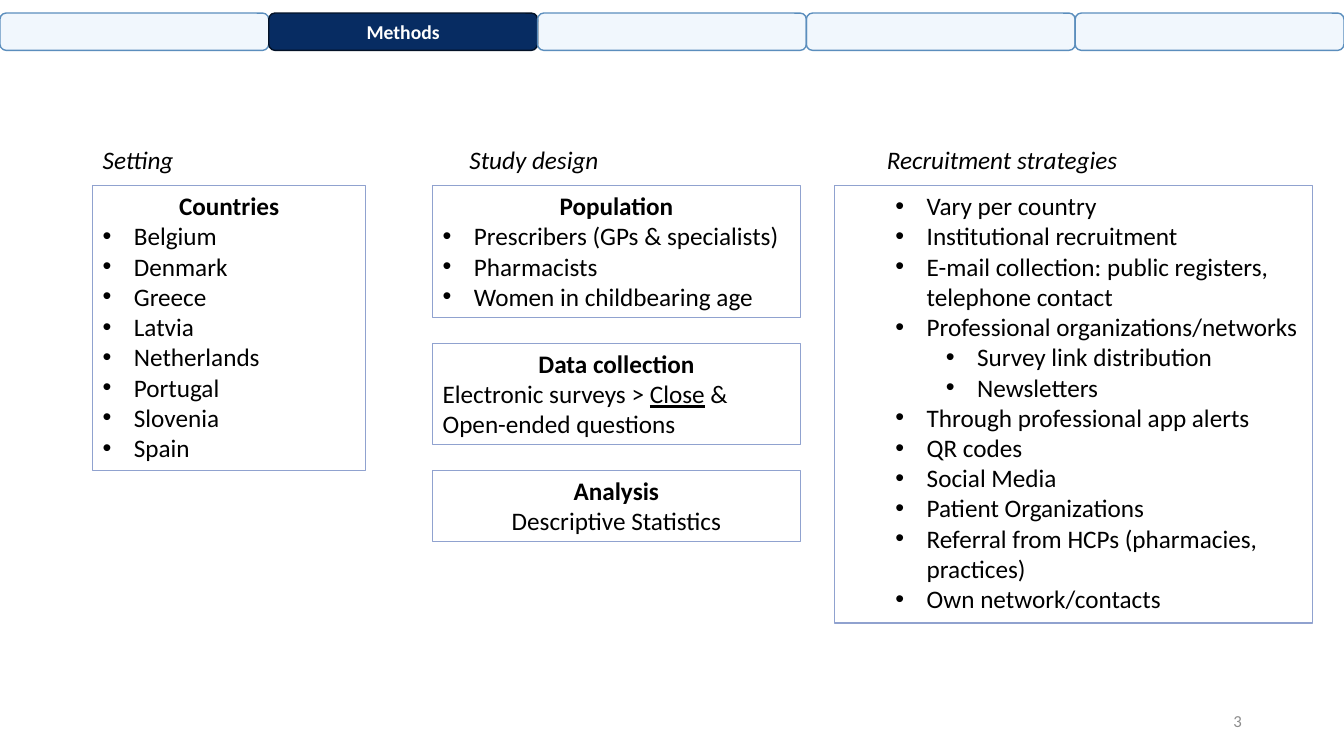
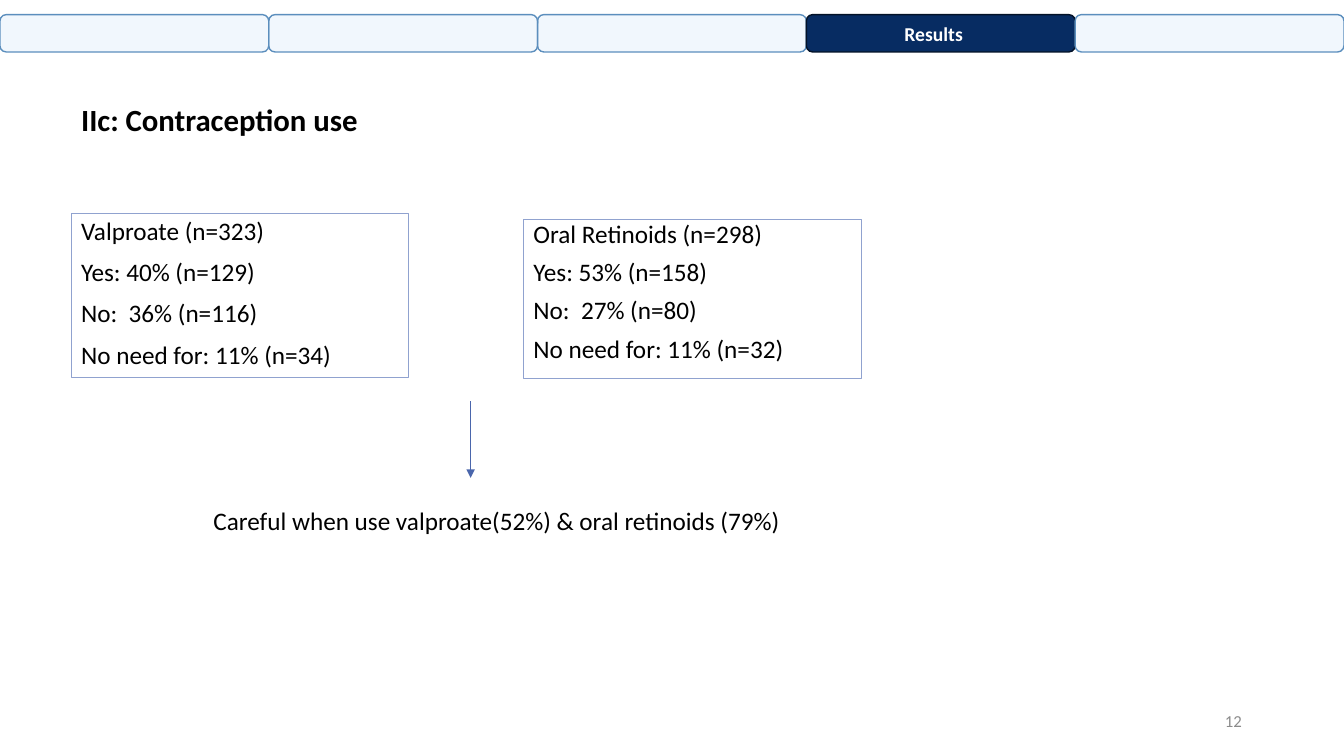
import pptx
import pptx.dml.color
import pptx.enum.shapes
import pptx.enum.text
import pptx.oxml.ns
import pptx.util
from lxml import etree

Cm = pptx.util.Cm
Pt = pptx.util.Pt
ALIGN = pptx.enum.text.PP_ALIGN
ANCHOR = pptx.enum.text.MSO_ANCHOR
PRESET = pptx.enum.shapes.MSO_SHAPE

SLIDE_WIDTH, SLIDE_HEIGHT = 33.87, 19.05
BLACK, WHITE, GREY = "000000", "FFFFFF", "8C8C8C"
PANEL_LINE, ARROW = "90A2CF", "4A66AC"
ACTIVE_TAB = {"fill": "072C62", "line": "031227", "alpha": None}
IDLE_TAB = {"fill": "BAD8F7", "line": "5B8EBD", "alpha": 20}
TAB_COUNT, METHODS_TAB, RESULTS_TAB = 5, 1, 3

BODY = {"name": "Calibri", "size": Pt(18), "bold": False, "italic": False}
HEADING = BODY | {"bold": True}
COLUMN_LABEL = BODY | {"italic": True}
TITLE = HEADING | {"size": Pt(22)}
TAB = HEADING | {"size": Pt(14)}
PAGE_NUMBER = BODY | {"size": Pt(12)}

FLUSH = {"space_before": Pt(0), "space_after": Pt(0), "line_spacing": 1.0,
         "alignment": ALIGN.LEFT}
CENTRED = FLUSH | {"alignment": ALIGN.CENTER}
RIGHT = FLUSH | {"alignment": ALIGN.RIGHT}

BULLET_HANG, LEVEL_STEP = 0.79, 1.27
PANEL_TOP, PANEL_GAP = 4.67, 0.64


def rgb(hex_colour):
    return pptx.dml.color.RGBColor.from_string(hex_colour)


def apply(target, values):
    for attribute, value in values.items():
        setattr(target, attribute, value)


def add_xml(parent, tag, **attributes):
    return etree.SubElement(parent, pptx.oxml.ns.qn(tag), attributes)


def place(shape, box):
    apply(shape, dict(zip(("left", "top", "width", "height"), map(Cm, box))))


def line(text, font=BODY, layout=FLUSH, level=None):
    """Describe one paragraph; a level makes it a bullet."""
    runs = [(text, {})] if isinstance(text, str) else text
    return {"runs": runs, "font": font, "layout": layout, "level": level}


def bullets(*texts, level=0):
    return [line(text, level=level) for text in texts]


def write(shape, lines, colour=BLACK, anchor=ANCHOR.TOP):
    frame = shape.text_frame
    apply(frame, {"word_wrap": True, "vertical_anchor": anchor,
                  "auto_size": pptx.enum.text.MSO_AUTO_SIZE.NONE})
    for number, content in enumerate(lines):
        paragraph = frame.add_paragraph() if number else frame.paragraphs[0]
        apply(paragraph, content["layout"])
        for text, extra in content["runs"]:
            run = paragraph.add_run()
            run.text = text
            apply(run.font, content["font"] | extra)
            run.font.color.rgb = rgb(colour)
        set_bullet(paragraph, content["level"])


def set_bullet(paragraph, level):
    properties = paragraph._p.get_or_add_pPr()
    if level is None:
        margin, hang = 0, 0
        add_xml(properties, "a:buNone")
    else:
        paragraph.level = level
        margin, hang = BULLET_HANG + level * LEVEL_STEP, BULLET_HANG
        add_xml(properties, "a:buFont", typeface="Arial")
        add_xml(properties, "a:buChar", char="•")
    properties.set("marL", str(Cm(margin)))
    properties.set("indent", str(-Cm(hang)))


def add_text(slide, box, lines, **style):
    text_box = slide.shapes.add_textbox(*map(Cm, box))
    write(text_box, lines, **style)
    return text_box


def add_filled(slide, preset, box, colour):
    shape = slide.shapes.add_shape(preset, *map(Cm, box))
    shape.shadow.inherit = False
    shape.fill.solid()
    shape.fill.fore_color.rgb = rgb(colour)
    return shape


def outline(shape, colour, width):
    shape.line.color.rgb = rgb(colour)
    shape.line.width = Pt(width)


def add_panel(slide, box, lines, holder=None):
    """Draw an outlined text panel, in the body placeholder numbered holder if given."""
    if holder is None:
        panel = add_text(slide, box, lines)
    else:
        panel = slide.placeholders[holder]
        place(panel, box)
        write(panel, lines)
    outline(panel, PANEL_LINE, 0.75)


def add_tabs(slide, active, top):
    """Draw the row of section tabs and return the active one."""
    width = SLIDE_WIDTH / TAB_COUNT
    tabs = []
    for position in range(TAB_COUNT):
        look = ACTIVE_TAB if position == active else IDLE_TAB
        tab = add_filled(slide, PRESET.ROUNDED_RECTANGLE,
                         (position * width, top, width, 0.94), look["fill"])
        if look["alpha"]:
            colour = tab._element.spPr.find(".//" + pptx.oxml.ns.qn("a:srgbClr"))
            add_xml(colour, "a:alpha", val=str(look["alpha"] * 1000))
        outline(tab, look["line"], 1)
        tabs.append(tab)
    return tabs[active]


def add_page_number(slide, number):
    add_text(slide, (23.93, 17.65, 7.62, 1.02),
             [line(str(number), PAGE_NUMBER, RIGHT)], colour=GREY, anchor=ANCHOR.MIDDLE)


def add_down_arrow(slide, x, top, bottom):
    arrow = slide.shapes.add_connector(
        pptx.enum.shapes.MSO_CONNECTOR.STRAIGHT, Cm(x), Cm(top), Cm(x), Cm(bottom))
    outline(arrow, ARROW, 0.5)
    add_xml(arrow.line._get_or_add_ln(), "a:tailEnd", type="triangle")
    add_xml(arrow._element.spPr, "a:effectLst")


def build_methods(deck):
    slide = deck.slides.add_slide(deck.slide_layouts.get_by_name("Comparison"))
    title = slide.shapes.title._element
    title.getparent().remove(title)

    for label, left in (("Setting", 2.34), ("Study design", 11.58),
                        ("Recruitment strategies", 22.1)):
        add_text(slide, (left, 3.51, 6.88, 1.02), [line(label, COLUMN_LABEL)])

    countries = [line("Countries", HEADING, CENTRED)] + bullets(
        "Belgium", "Denmark", "Greece", "Latvia", "Netherlands", "Portugal",
        "Slovenia", "Spain")
    add_panel(slide, (2.33, PANEL_TOP, 6.89, 7.19), countries, holder=1)

    population = [line("Population", HEADING, CENTRED)] + bullets(
        "Prescribers (GPs & specialists)", "Pharmacists", "Women in childbearing age")
    collection = [
        line("Data collection", HEADING, CENTRED),
        line([("Electronic surveys > ", {}), ("Close", {"underline": True}), (" &", {})]),
        line("Open-ended questions")]
    analysis = [line("Analysis", HEADING, CENTRED),
                line("Descriptive Statistics", layout=CENTRED)]
    top = PANEL_TOP
    for lines, height, holder in ((population, 3.34, 2), (collection, 2.56, 3),
                                  (analysis, 1.8, None)):
        add_panel(slide, (10.9, top, 9.27, height), lines, holder)
        top += height + PANEL_GAP

    recruitment = (
        bullets("Vary per country", "Institutional recruitment",
                "E-mail collection: public registers, telephone contact",
                "Professional organizations/networks", level=1)
        + bullets("Survey link distribution", "Newsletters", level=2)
        + bullets("Through professional app alerts", "QR codes", "Social Media",
                  "Patient Organizations", "Referral from HCPs (pharmacies, practices)",
                  "Own network/contacts", level=1))
    add_panel(slide, (21.04, PANEL_TOP, 12.04, 11.03), recruitment, holder=4)

    methods = add_tabs(slide, METHODS_TAB, 0.33)
    write(methods, [line("Methods", TAB, CENTRED)], WHITE, ANCHOR.MIDDLE)
    add_page_number(slide, 3)


def build_contraception(deck):
    slide = deck.slides.add_slide(deck.slide_layouts.get_by_name("Two Content"))
    title = slide.shapes.title
    place(title, (1.79, 1.83, 29.21, 2.46))
    write(title, [line("IIc: Contraception use", TITLE, FLUSH | {"line_spacing": 0.9})],
          anchor=ANCHOR.MIDDLE)

    answers = (
        (1, (1.79, 5.38, 8.51, 4.14), 0.9,
         ("Valproate (n=323)", "Yes: 40% (n=129)", "No:  36% (n=116)",
          "No need for: 11% (n=34)")),
        (2, (13.19, 5.52, 8.51, 4.01), 0.8,
         ("Oral Retinoids (n=298)", "Yes: 53% (n=158)", "No:  27% (n=80)",
          "No need for: 11% (n=32)")))
    for holder, box, line_spacing, texts in answers:
        spaced = FLUSH | {"line_spacing": line_spacing, "space_before": Pt(10)}
        add_panel(slide, box, [line(text, layout=spaced) for text in texts], holder)

    add_down_arrow(slide, 11.86, 10.11, 12.04)
    advice = add_filled(slide, PRESET.RECTANGLE, (5.13, 12.6, 16.13, 2.57), WHITE)
    advice.line.fill.background()
    write(advice, [line("Careful when use valproate(52%) & oral retinoids (79%)")])

    add_tabs(slide, RESULTS_TAB, 0.37)
    add_text(slide, (20.14, 0.43, 6.78, 0.86), [line("Results", TAB, CENTRED)],
             colour=WHITE)
    add_page_number(slide, 12)


def main():
    deck = pptx.Presentation()
    deck.slide_width, deck.slide_height = Cm(SLIDE_WIDTH), Cm(SLIDE_HEIGHT)
    build_methods(deck)
    build_contraception(deck)
    deck.save("out.pptx")


if __name__ == "__main__":
    main()
